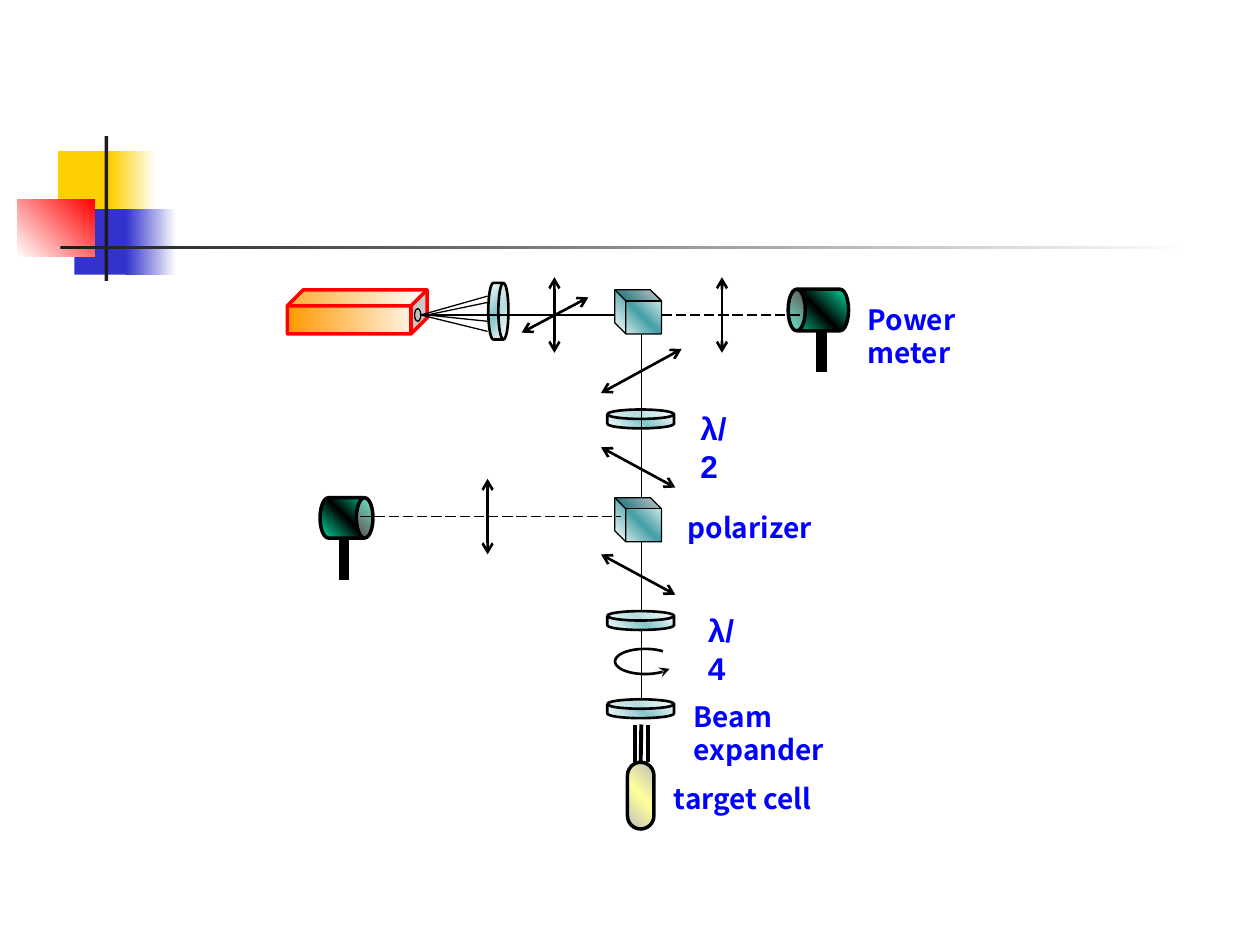
import pptx
import pptx.util
import pptx.dml.color
import pptx.enum.dml
import pptx.enum.shapes
import pptx.enum.text
import pptx.oxml
import pptx.oxml.ns

Inches, Pt = pptx.util.Inches, pptx.util.Pt
RGBColor = pptx.dml.color.RGBColor
KIND = pptx.enum.shapes.MSO_SHAPE

BLACK = RGBColor(0x00, 0x00, 0x00)
WHITE = RGBColor(0xFF, 0xFF, 0xFF)
INK = RGBColor(0x1C, 0x1C, 0x1C)
YELLOW = RGBColor(0xFF, 0xCF, 0x01)
INDIGO = RGBColor(0x33, 0x33, 0xCC)
RED = RGBColor(0xFF, 0x00, 0x00)
ORANGE = RGBColor(0xFF, 0x99, 0x00)
SILVER = RGBColor(0xC0, 0xC0, 0xC0)
GLASS = RGBColor(0x84, 0xC7, 0xCC)
TEAL = RGBColor(0x45, 0xA0, 0xA7)
GREEN = RGBColor(0x00, 0xE4, 0xA8)
CREAM = RGBColor(0xFF, 0xFF, 0x99)
BLUE = RGBColor(0x00, 0x00, 0xFF)

# Gradients: clockwise angle, then evenly spaced colours
GLASS_FILL = (315, WHITE, GLASS, WHITE)
CUBE_FILL = (45, WHITE, TEAL, WHITE)
METER_FILL = (45, GREEN, BLACK, GREEN)
CELL_FILL = (315, SILVER, CREAM, SILVER)

prs = pptx.Presentation()
prs.slide_width, prs.slide_height = Inches(10), Inches(7.5)
slide = prs.slides.add_slide(prs.slide_layouts[6])


def add_part(kind, box, fill=None, line=None, width=0.75, adjust=(), turn=0):
    part = slide.shapes.add_shape(kind, *map(Inches, box))
    part.shadow.inherit = False
    part.rotation = turn
    for index, value in enumerate(adjust):
        part.adjustments[index] = value
    if fill is None:
        part.fill.background()
    elif isinstance(fill, RGBColor):
        part.fill.solid()
        part.fill.fore_color.rgb = fill
    else:
        angle, *colors = fill
        stops = "".join(
            f'<a:gs pos="{100000 * i // (len(colors) - 1)}"><a:srgbClr val="{color}"/></a:gs>'
            for i, color in enumerate(colors))
        gradient = pptx.oxml.parse_xml(
            f'<a:gradFill {pptx.oxml.ns.nsdecls("a")} rotWithShape="1"><a:gsLst>{stops}</a:gsLst>'
            f'<a:lin ang="{angle * 60000}" scaled="0"/></a:gradFill>')
        part._element.spPr.find(pptx.oxml.ns.qn("a:prstGeom")).addnext(gradient)
    if line is None:
        part.line.fill.background()
    else:
        part.line.color.rgb = line
        part.line.width = Pt(width)
    return part


def add_ray(start, end, width=0.75, dashed=False, arrows=False):
    ray = slide.shapes.add_connector(
        pptx.enum.shapes.MSO_CONNECTOR.STRAIGHT, *map(Inches, (*start, *end)))
    ray.line.color.rgb = BLACK
    ray.line.width = Pt(width)
    if dashed:
        ray.line.dash_style = pptx.enum.dml.MSO_LINE.LONG_DASH
    if arrows:
        for tag in ("a:headEnd", "a:tailEnd"):
            pptx.oxml.ns.qn(tag)
            ray.line._ln.append(pptx.oxml.parse_xml(
                f'<{tag} {pptx.oxml.ns.nsdecls("a")} type="arrow"/>'))
    ray._element.spPr.append(pptx.oxml.parse_xml(
        f'<a:effectLst {pptx.oxml.ns.nsdecls("a")}/>'))
    return ray


# Corner decoration and rule
for box, fill in (
    ((0.46, 1.2, 0.48, 0.52), YELLOW),
    ((0.88, 1.2, 0.36, 0.52), (0, YELLOW, WHITE)),
    ((0.59, 1.66, 0.46, 0.52), INDIGO),
    ((1, 1.66, 0.4, 0.52), (0, INDIGO, WHITE)),
    ((0.14, 1.58, 0.61, 0.46), (315, WHITE, RED)),
    ((0.83, 1.08, 0.03, 1.15), INK),
    ((0.48, 1.95, 9, 0.03), (0, INK, WHITE)),
):
    add_part(KIND.RECTANGLE, box, fill)

# Laser with its aperture, and the collimating lens
add_part(KIND.CUBE, (2.28, 2.3, 1.11, 0.35), (0, ORANGE, WHITE), RED, 2, [0.363])
add_part(KIND.OVAL, (3.29, 2.45, 0.05, 0.1), SILVER, BLACK)
add_part(KIND.CAN, (3.73, 2.39, 0.45, 0.16), GLASS_FILL, BLACK, 1.5, [0.5], 90)

# Half-wave plate lies behind the beam, quarter-wave plate and expander before it
PLATE_TOPS = (3.25, 4.85, 5.55)
for order, top in enumerate(PLATE_TOPS):
    if order == 1:
        add_ray((3.34, 2.5), (4.93, 2.5))
        add_ray((5.09, 2.65), (5.09, 5.6))
    add_part(KIND.CAN, (4.82, top, 0.53, 0.15), GLASS_FILL, BLACK, 1.5, [0.5])

# Polarizer cubes
for top in (2.29, 3.94):
    add_part(KIND.CUBE, (4.89, top, 0.35, 0.37), CUBE_FILL, BLACK, 0.75, [0.25], 270)

# Power meters on their posts
for box, turn, post_x, post_top in (
    ((6.33, 2.22, 0.33, 0.48), 270, 6.52, 2.62),
    ((2.59, 3.9, 0.32, 0.42), 90, 2.73, 4.27),
):
    add_part(KIND.CAN, box, METER_FILL, BLACK, 2, [0.413], turn)
    add_ray((post_x, post_top), (post_x, post_top + 0.33), 6)

# Dashed beams to the meters
add_ray((2.86, 4.1), (4.93, 4.1), dashed=True)
add_ray((5.25, 2.5), (6.36, 2.5), dashed=True)

# Linear polarization arrows
for start, end in (
    ((4.77, 3.12), (5.41, 2.77)),
    ((4.14, 2.64), (4.67, 2.36)),
    ((4.4, 2.2), (4.4, 2.8)),
    ((5.73, 2.2), (5.73, 2.8)),
    ((4.77, 3.55), (5.36, 3.87)),
    ((3.87, 3.8), (3.87, 4.4)),
    ((4.77, 4.4), (5.36, 4.72)),
):
    add_ray(start, end, 1.5, arrows=True)

# Circular polarization arrow; an arc adjustment is 0.6 per degree
circular = add_part(KIND.ARC, (4.88, 5.15, 0.48, 0.2), None, BLACK, 1.5,
                    [16.7 * 0.6, 330.3 * 0.6])
circular.line._ln.append(pptx.oxml.parse_xml(
    f'<a:headEnd {pptx.oxml.ns.nsdecls("a")} type="stealth"/>'))

# Diverging rays from the laser to the lens
for start_x, end_y in ((3.34, 2.35), (3.34, 2.63), (3.39, 2.55), (3.39, 2.4)):
    add_ray((start_x, 2.5), (3.87, end_y))

# Target cell with the expanded beam above it
cell = add_part(KIND.ROUNDED_RECTANGLE, (4.98, 6.05, 0.21, 0.53), CELL_FILL, BLACK, 2, [0.5])
for x in (5.04, 5.09, 5.14):
    expanded = add_ray((x, 5.75), (x, 6.05), 2.25)
    if x == 5.09:
        expanded.end_connect(cell, 0)

# Labels
WORD_FONT = {"name": "Noto Sans CJK KR", "size": Pt(16), "bold": True}
WAVE_FONT = {"name": "Arial", "size": Pt(18), "bold": True}
for words, box, font in (
    ("Power meter", (6.79, 2.35, 1.38, 0.64), WORD_FONT),
    ("polarizer", (5.36, 4, 1.32, 0.37), WORD_FONT),
    ("Beam expander", (5.41, 5.5, 1.8, 0.64), WORD_FONT),
    ("target cell", (5.25, 6.15, 1.48, 0.37), WORD_FONT),
    ("λ/2", (5.46, 3.2, 0.42, 0.7), WAVE_FONT),
    ("λ/4", (5.52, 4.8, 0.42, 0.7), WAVE_FONT),
):
    label = slide.shapes.add_textbox(*map(Inches, box)).text_frame
    label.word_wrap = True
    label.auto_size = pptx.enum.text.MSO_AUTO_SIZE.SHAPE_TO_FIT_TEXT
    run = label.paragraphs[0].add_run()
    run.text = words
    for attribute, value in font.items():
        setattr(run.font, attribute, value)
    run.font.color.rgb = BLUE

prs.save("out.pptx")
